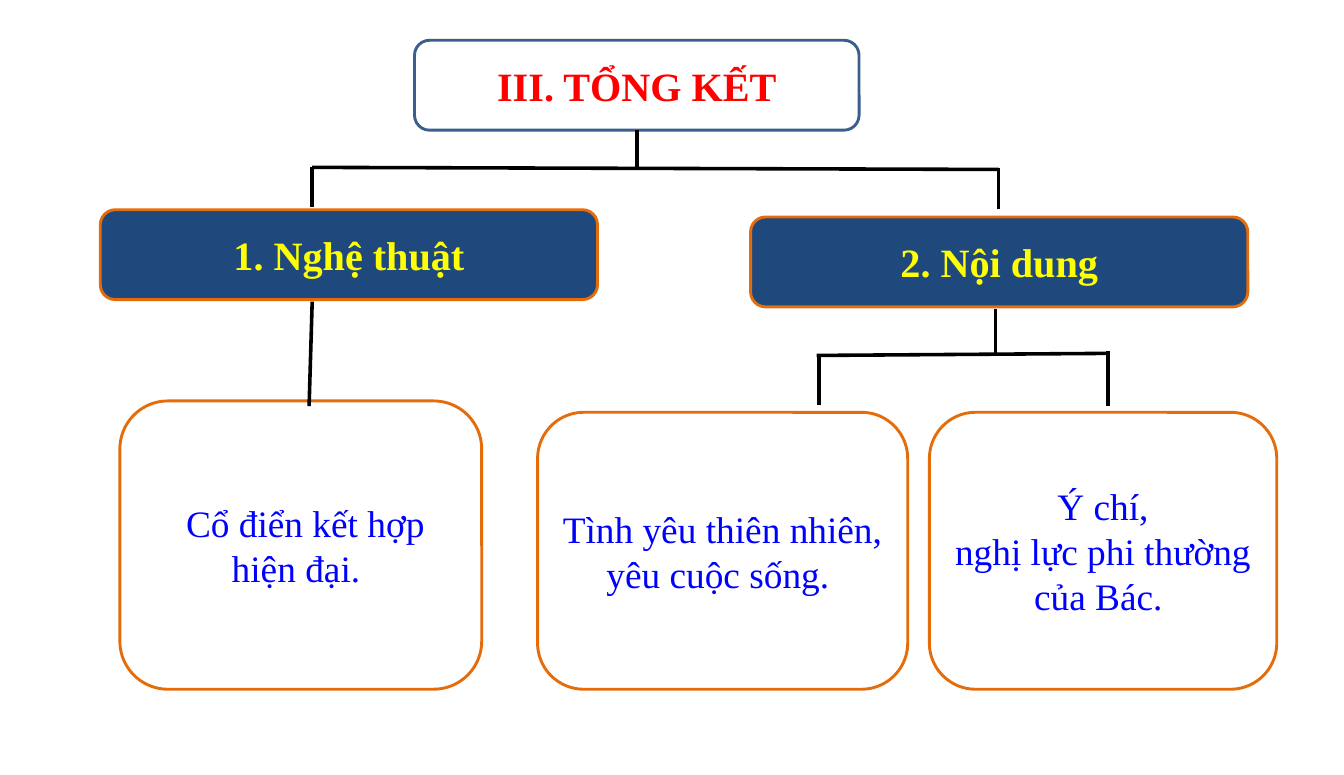
"""Build a summary slide: a tree from the conclusion to art and content."""
from lxml import etree
from pptx import Presentation
from pptx.dml.color import RGBColor
from pptx.enum.shapes import MSO_CONNECTOR, MSO_SHAPE
from pptx.enum.text import MSO_ANCHOR, PP_ALIGN
from pptx.oxml.ns import qn
from pptx.util import Inches, Pt

ROUNDED = MSO_SHAPE.ROUNDED_RECTANGLE
STRAIGHT = MSO_CONNECTOR.STRAIGHT
MIDDLE = MSO_ANCHOR.MIDDLE
CENTER = PP_ALIGN.CENTER

WHITE = RGBColor(0xFF, 0xFF, 0xFF)
BLACK = RGBColor(0x00, 0x00, 0x00)
RED = RGBColor(0xFF, 0x00, 0x00)
YELLOW = RGBColor(0xFF, 0xFF, 0x00)
BLUE = RGBColor(0x00, 0x00, 0xFF)
NAVY = RGBColor(0x1F, 0x49, 0x7D)
STEEL = RGBColor(0x3A, 0x5F, 0x8C)
ORANGE = RGBColor(0xE4, 0x6C, 0x0A)
FONT = "Times New Roman"

STYLES = {
    "title": dict(fill=WHITE, line=STEEL, color=RED, size=28, bold=True),
    "heading": dict(fill=NAVY, line=ORANGE, color=YELLOW, size=28, bold=True),
    "detail": dict(fill=WHITE, line=ORANGE, color=BLUE, size=26, bold=False),
}

BOXES = [
    ("title", (4.01, 0.39, 4.3, 0.87), ["III. TỔNG KẾT"]),
    ("heading", (0.97, 2.03, 4.81, 0.87), ["1. Nghệ thuật"]),
    ("heading", (7.26, 2.1, 4.81, 0.87), ["2. Nội dung"]),
    ("detail", (1.16, 3.88, 3.5, 2.79), [" Cổ điển kết hợp hiện đại. "]),
    ("detail", (5.2, 3.99, 3.58, 2.68), ["Tình yêu thiên nhiên, yêu cuộc sống. "]),
    ("detail", (8.99, 3.99, 3.36, 2.68),
     ["Ý chí,", "nghị lực phi thường của Bác. "]),
]

TITLE_STEM = (6.16, 1.26, 6.16, 1.64)
BRANCHES = [
    (3.02, 1.62, 9.66, 1.64),
    (3.02, 1.62, 3.02, 2.0),
    (9.66, 1.63, 9.66, 2.02),
    (9.63, 2.99, 9.63, 3.43),
    (7.9, 3.44, 10.73, 3.42),
    (7.92, 3.44, 7.92, 3.92),
    (10.72, 3.4, 10.72, 3.93),
    (3.02, 2.92, 2.99, 3.93),
]


def add_box(s, style, box, paragraphs):
    look = STYLES[style]
    sp = s.shapes.add_shape(ROUNDED, *map(Inches, box))
    sp.shadow.inherit = False
    sp.fill.solid()
    sp.fill.fore_color.rgb = look["fill"]
    sp.line.color.rgb = look["line"]
    sp.line.width = Pt(2)
    tf = sp.text_frame
    tf.word_wrap = True
    tf.vertical_anchor = MIDDLE
    for i, text in enumerate(paragraphs):
        p = tf.add_paragraph() if i else tf.paragraphs[0]
        p.alignment = CENTER
        r = p.add_run()
        r.text = text
        r.font.name = FONT
        r.font.size = Pt(look["size"])
        r.font.bold = look["bold"]
        r.font.color.rgb = look["color"]
    return sp


def add_branch(s, ends):
    cx = s.shapes.add_connector(STRAIGHT, *map(Inches, ends))
    cx.line.color.rgb = BLACK
    cx.line.width = Pt(2.5)
    etree.SubElement(cx._element.spPr, qn("a:effectLst"))
    return cx


def main():
    prs = Presentation()
    prs.slide_width, prs.slide_height = Inches(13), Inches(7.5)
    s = prs.slides.add_slide(prs.slide_layouts[6])
    boxes = [add_box(s, *box) for box in BOXES]
    add_branch(s, TITLE_STEM).begin_connect(boxes[0], 2)
    for ends in BRANCHES:
        add_branch(s, ends)
    prs.save("out.pptx")


if __name__ == "__main__":
    main()
